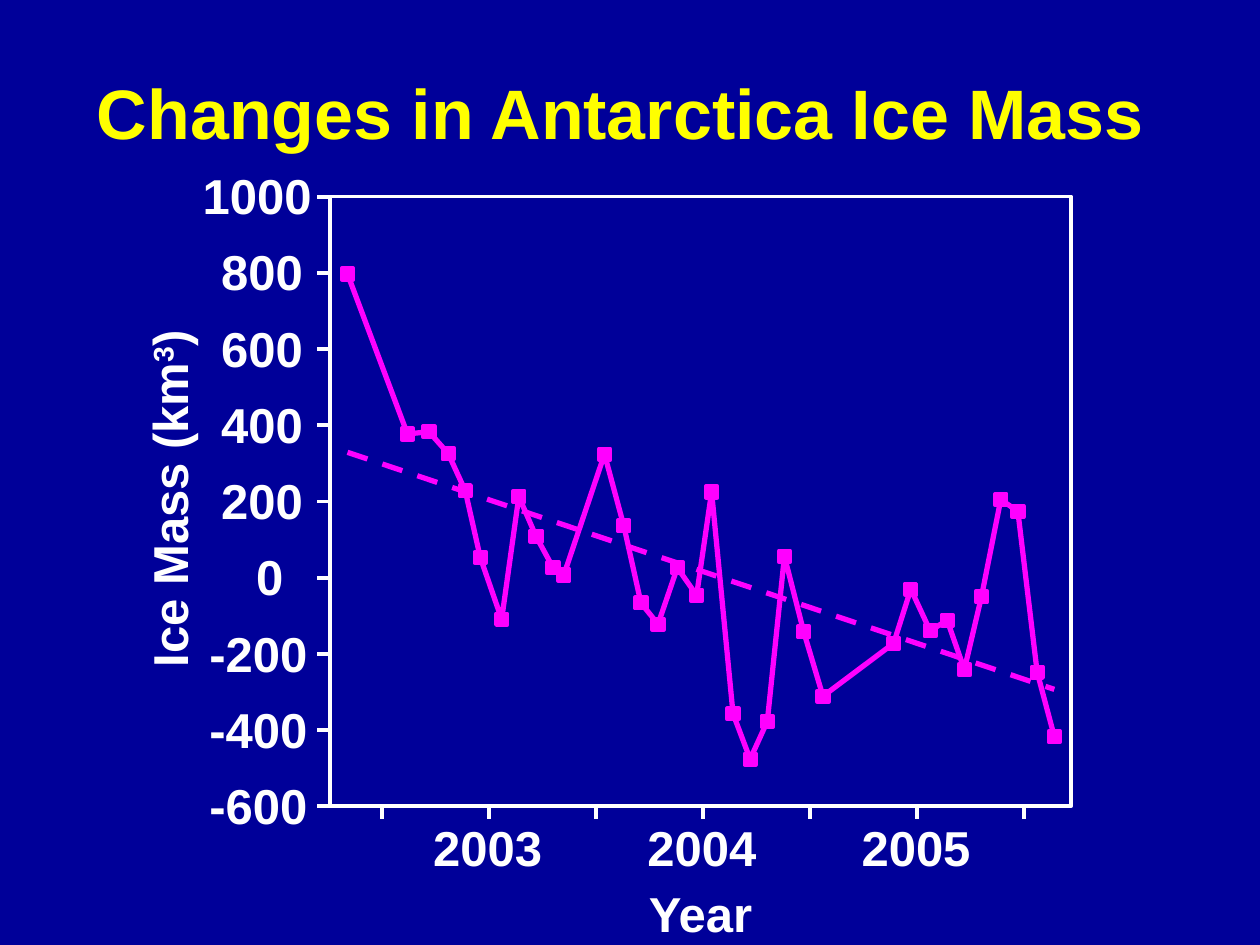
from lxml import etree
from pptx import Presentation
from pptx.dml.color import RGBColor
from pptx.enum.dml import MSO_LINE
from pptx.enum.shapes import MSO_CONNECTOR, MSO_SHAPE
from pptx.enum.text import MSO_ANCHOR, MSO_AUTO_SIZE, PP_ALIGN
from pptx.oxml.ns import qn
from pptx.util import Inches, Pt

STRAIGHT = MSO_CONNECTOR.STRAIGHT
RECTANGLE = MSO_SHAPE.RECTANGLE
DASH = MSO_LINE.DASH
CENTER = PP_ALIGN.CENTER

COLORS = {"background": "000099", "title": "FFFF00", "axis": "FFFFFF",
          "mass": "FF00FF", "shadow": "000000"}
FONT = "Arial"

TITLE = "Changes in Antarctica Ice Mass "
YEAR_TITLE = "Year"
MASS_TITLE = [("Ice Mass (km", False), ("3", True), (")", False)]

ICE_MASS = [
    (2002.34, 797), (2002.62, 377), (2002.72, 383), (2002.81, 326),
    (2002.89, 228), (2002.96, 53), (2003.06, -109), (2003.14, 213),
    (2003.22, 109), (2003.30, 26), (2003.35, 7), (2003.54, 324),
    (2003.63, 136), (2003.71, -66), (2003.79, -122), (2003.88, 26),
    (2003.97, -46), (2004.04, 225), (2004.14, -357), (2004.22, -476),
    (2004.30, -377), (2004.38, 56), (2004.47, -142), (2004.56, -311),
    (2004.89, -172), (2004.97, -30), (2005.06, -139), (2005.14, -112),
    (2005.22, -241), (2005.30, -50), (2005.39, 205), (2005.47, 174),
    (2005.56, -248), (2005.64, -417),
]
TREND = [(2002.34, 329), (2005.64, -293)]
MASS_LABELS = [("1000", 2.04), ("800", 2.08), ("600", 2.08), ("400", 2.08),
               ("200", 2.08), ("0", 2.14), ("-200", 2.05), ("-400", 2.05),
               ("-600", 2.05)]
YEARS = [2003, 2004, 2005]
HALF_YEARS = [2002.5 + step / 2 for step in range(7)]

LEFT, TOP, WIDTH, HEIGHT = 2.62, 1.56, 5.88, 4.84
MASS_MAX, MASS_MIN = 1000, -600
YEAR_WIDTH = 1.7
FIRST_YEAR_X = 3.88
TICK = 0.1
MARKER = 0.09
LABEL_HEIGHT = 0.47


def year_x(year):
    return FIRST_YEAR_X + (year - YEARS[0]) * YEAR_WIDTH


def mass_y(mass):
    return TOP + (MASS_MAX - mass) / (MASS_MAX - MASS_MIN) * HEIGHT


def color(name):
    return RGBColor.from_string(COLORS[name])


def style_line(shape, name, width):
    shape.line.color.rgb = color(name)
    shape.line.width = Pt(width)


def add_line(slide, start, end, name, width):
    line = slide.shapes.add_connector(
        STRAIGHT, *(Inches(length) for length in (*start, *end)))
    style_line(line, name, width)
    properties = line._element.find(qn("p:spPr"))
    etree.SubElement(properties, qn("a:effectLst"))
    return line


def add_label(slide, center_x, center_y, width, parts, rotation=0):
    label = slide.shapes.add_textbox(
        Inches(center_x - width / 2), Inches(center_y - LABEL_HEIGHT / 2),
        Inches(width), Inches(LABEL_HEIGHT))
    label.rotation = rotation
    frame = label.text_frame
    frame.margin_left = frame.margin_right = 0
    frame.margin_top = frame.margin_bottom = 0
    frame.word_wrap = False
    frame.auto_size = MSO_AUTO_SIZE.SHAPE_TO_FIT_TEXT
    paragraph = frame.paragraphs[0]
    paragraph.alignment = CENTER
    for text, superscript in parts:
        run = paragraph.add_run()
        run.text = text
        style_font(run.font, 28, "axis")
        if superscript:
            run.font._element.set("baseline", "30000")


def style_font(font, size, name):
    font.name = FONT
    font.size = Pt(size)
    font.bold = True
    font.color.rgb = color(name)


def add_title(slide):
    title = slide.shapes.title
    title.left, title.top = Inches(0.5), Inches(0.3)
    title.width, title.height = Inches(9), Inches(1.25)
    title.text_frame.text = TITLE
    title.text_frame.vertical_anchor = MSO_ANCHOR.MIDDLE
    paragraph = title.text_frame.paragraphs[0]
    paragraph.alignment = CENTER
    paragraph.line_spacing = 0.9
    run = paragraph.runs[0]
    style_font(run.font, 40, "title")
    effects = etree.Element(qn("a:effectLst"))
    shadow = etree.SubElement(effects, qn("a:outerShdw"), blurRad="38100",
                              dist="38100", dir="2700000")
    etree.SubElement(shadow, qn("a:srgbClr"), val=COLORS["shadow"])
    run.font._element.find(qn("a:solidFill")).addnext(effects)


def add_series(slide):
    series = slide.shapes.add_group_shape()
    points = [(Inches(year_x(year)), Inches(mass_y(mass)))
              for year, mass in ICE_MASS]
    builder = series.shapes.build_freeform(*points[0])
    builder.add_line_segments(points[1:], close=False)
    curve = builder.convert_to_shape()
    curve.shadow.inherit = False
    curve.fill.background()
    style_line(curve, "mass", 3)
    side = Inches(MARKER)
    for x, y in points:
        marker = series.shapes.add_shape(
            RECTANGLE, x - side // 2, y - side // 2, side, side)
        marker.shadow.inherit = False
        marker.fill.solid()
        marker.fill.fore_color.rgb = color("mass")
        style_line(marker, "mass", 2.25)


def add_axes(slide):
    plot = slide.shapes.add_shape(
        RECTANGLE, Inches(LEFT), Inches(TOP), Inches(WIDTH), Inches(HEIGHT))
    plot.shadow.inherit = False
    plot.fill.background()
    style_line(plot, "axis", 2.25)
    for text, center in MASS_LABELS:
        y = mass_y(int(text))
        add_label(slide, center, y - 0.01, 0.22 * len(text), [(text, False)])
        add_line(slide, (LEFT, y), (LEFT - TICK, y), "axis", 2.25)
    bottom = TOP + HEIGHT
    for year in YEARS:
        add_label(slide, year_x(year) - 0.01, bottom + 0.32, 0.87,
                  [(str(year), False)])
    for year in HALF_YEARS:
        x = year_x(year)
        add_line(slide, (x, bottom), (x, bottom + TICK), "axis", 2.25)
    add_label(slide, 1.34, 3.96, 2.7, MASS_TITLE, rotation=270)
    add_label(slide, LEFT + WIDTH / 2, bottom + 0.85, 0.84,
              [(YEAR_TITLE, False)])


def main():
    deck = Presentation()
    deck.slide_width, deck.slide_height = Inches(10), Inches(7.5)
    slide = deck.slides.add_slide(deck.slide_layouts[5])
    slide.background.fill.solid()
    slide.background.fill.fore_color.rgb = color("background")
    add_series(slide)
    start, end = [(year_x(year), mass_y(mass)) for year, mass in TREND]
    add_line(slide, start, end, "mass", 3).line.dash_style = DASH
    add_axes(slide)
    add_title(slide)
    deck.save("out.pptx")


if __name__ == "__main__":
    main()
